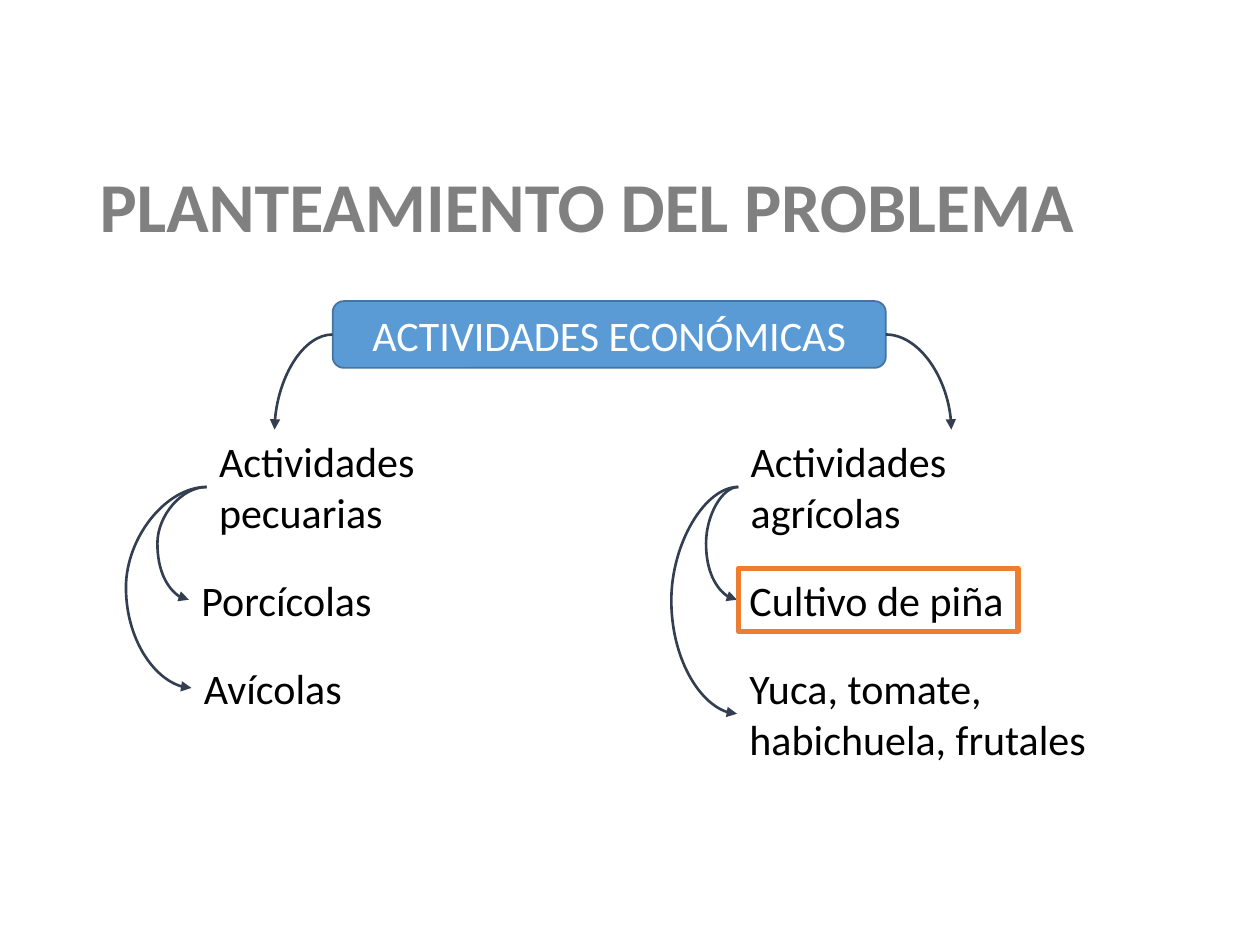
from lxml import etree
from pptx import Presentation
from pptx.dml.color import RGBColor
from pptx.enum.shapes import MSO_CONNECTOR, MSO_SHAPE
from pptx.enum.text import MSO_ANCHOR, MSO_AUTO_SIZE, PP_ALIGN
from pptx.oxml.ns import qn
from pptx.util import Inches, Pt

CURVE = MSO_CONNECTOR.CURVE
ROUNDED, RECTANGLE = MSO_SHAPE.ROUNDED_RECTANGLE, MSO_SHAPE.RECTANGLE
MIDDLE = MSO_ANCHOR.MIDDLE
LEFT, CENTER = PP_ALIGN.LEFT, PP_ALIGN.CENTER
NO_FIT, GROW = MSO_AUTO_SIZE.NONE, MSO_AUTO_SIZE.SHAPE_TO_FIT_TEXT
FONT = "Calibri"
LABEL_WIDTH = 2.96
ONE_LINE, TWO_LINES = 0.5, 0.91
HEADING_TOP = 3.41


def color(value):
    """Return the colour for a hex string."""
    return RGBColor.from_string(value)


def write(text_frame, text, size, hex_color, align=LEFT, bold=False):
    """Write one formatted paragraph into a text frame."""
    text_frame.word_wrap = True
    paragraph = text_frame.paragraphs[0]
    paragraph.text = text
    paragraph.alignment = align
    font = paragraph.runs[0].font
    font.name, font.size, font.bold = FONT, Pt(size), bold
    font.color.rgb = color(hex_color)


def add_title(slide, left, top, width, height):
    """Place and format the title placeholder."""
    title = slide.shapes.title
    title.left, title.top = Inches(left), Inches(top)
    title.width, title.height = Inches(width), Inches(height)
    write(title.text_frame, "PLANTEAMIENTO DEL PROBLEMA", 40, "808080", bold=True)
    title.text_frame.auto_size = NO_FIT
    title.text_frame.vertical_anchor = MIDDLE
    title.text_frame.paragraphs[0].line_spacing = 0.9


def add_box(slide, preset, box, line_color, line_width, fill=None):
    """Add an outlined shape with an optional fill."""
    shape = slide.shapes.add_shape(preset, *map(Inches, box))
    shape.shadow.inherit = False
    if fill:
        shape.fill.solid()
        shape.fill.fore_color.rgb = color(fill)
    else:
        shape.fill.background()
    shape.line.color.rgb = color(line_color)
    shape.line.width = Pt(line_width)
    return shape


def add_label(slide, text, left, top, height):
    """Add a text label of the common width."""
    box = slide.shapes.add_textbox(
        Inches(left), Inches(top), Inches(LABEL_WIDTH), Inches(height))
    write(box.text_frame, text, 24, "000000")
    box.text_frame.auto_size = GROW


def add_curve(slide, start, end, bulge=None):
    """Add a curved arrow: a C through x = bulge, or a quarter turn without it."""
    connector = slide.shapes.add_connector(CURVE, *map(Inches, start + end))
    connector.line.color.rgb = color("333F50")
    connector.line.width = Pt(1.5)
    properties = connector._element.spPr
    etree.SubElement(properties.find(qn("a:ln")), qn("a:tailEnd"), type="triangle")
    etree.SubElement(properties, qn("a:effectLst"))
    geometry = properties.find(qn("a:prstGeom"))
    if bulge is None:
        geometry.set("prst", "curvedConnector2")
    else:
        ratio = (start[0] - bulge) / (start[0] - end[0])
        guides = geometry.find(qn("a:avLst"))
        etree.SubElement(guides, qn("a:gd"), name="adj1",
                         fmla=f"val {round(ratio * 100000)}")


def add_branch(slide, heading, left, items):
    """Add a heading and its items, each reached by an arrow from the heading."""
    add_label(slide, heading, left, HEADING_TOP, TWO_LINES)
    start = (left, HEADING_TOP + TWO_LINES / 2)
    for text, item_left, top, height, bulge in items:
        add_label(slide, text, item_left, top, height)
        add_curve(slide, start, (item_left, top + height / 2), bulge)


def add_root(slide, left, top, width, height, targets):
    """Add the root box with an arrow from each side down to its branch."""
    root = add_box(slide, ROUNDED, (left, top, width, height), "43739E", 1, "5B9BD5")
    write(root.text_frame, "ACTIVIDADES ECONÓMICAS", 24, "FFFFFF", CENTER)
    root.text_frame.vertical_anchor = MIDDLE
    for side, target in zip((left, left + width), targets):
        add_curve(slide, (side, top + height / 2), (target, HEADING_TOP))


def main():
    """Build the slide and save it."""
    presentation = Presentation()
    presentation.slide_width, presentation.slide_height = Inches(10), Inches(7.5)
    slide = presentation.slides.add_slide(presentation.slide_layouts[5])
    add_title(slide, 0.69, 1.1, 8.62, 1.13)
    add_root(slide, 2.64, 2.39, 4.39, 0.53, (2.18, 7.55))
    add_branch(slide, "Actividades pecuarias", 1.64, [
        ("Porcícolas", 1.5, 4.51, ONE_LINE, 1.25),
        ("Avícolas", 1.52, 5.21, ONE_LINE, 1.0),
    ])
    add_branch(slide, "Actividades agrícolas", 5.86, [
        ("Cultivo de piña", 5.85, 4.51, ONE_LINE, 5.6),
        ("Yuca, tomate, habichuela, frutales", 5.85, 5.21, TWO_LINES, 5.32),
    ])
    add_box(slide, RECTANGLE, (5.86, 4.51, 2.22, ONE_LINE), "ED7D31", 3)
    presentation.save("out.pptx")


if __name__ == "__main__":
    main()
